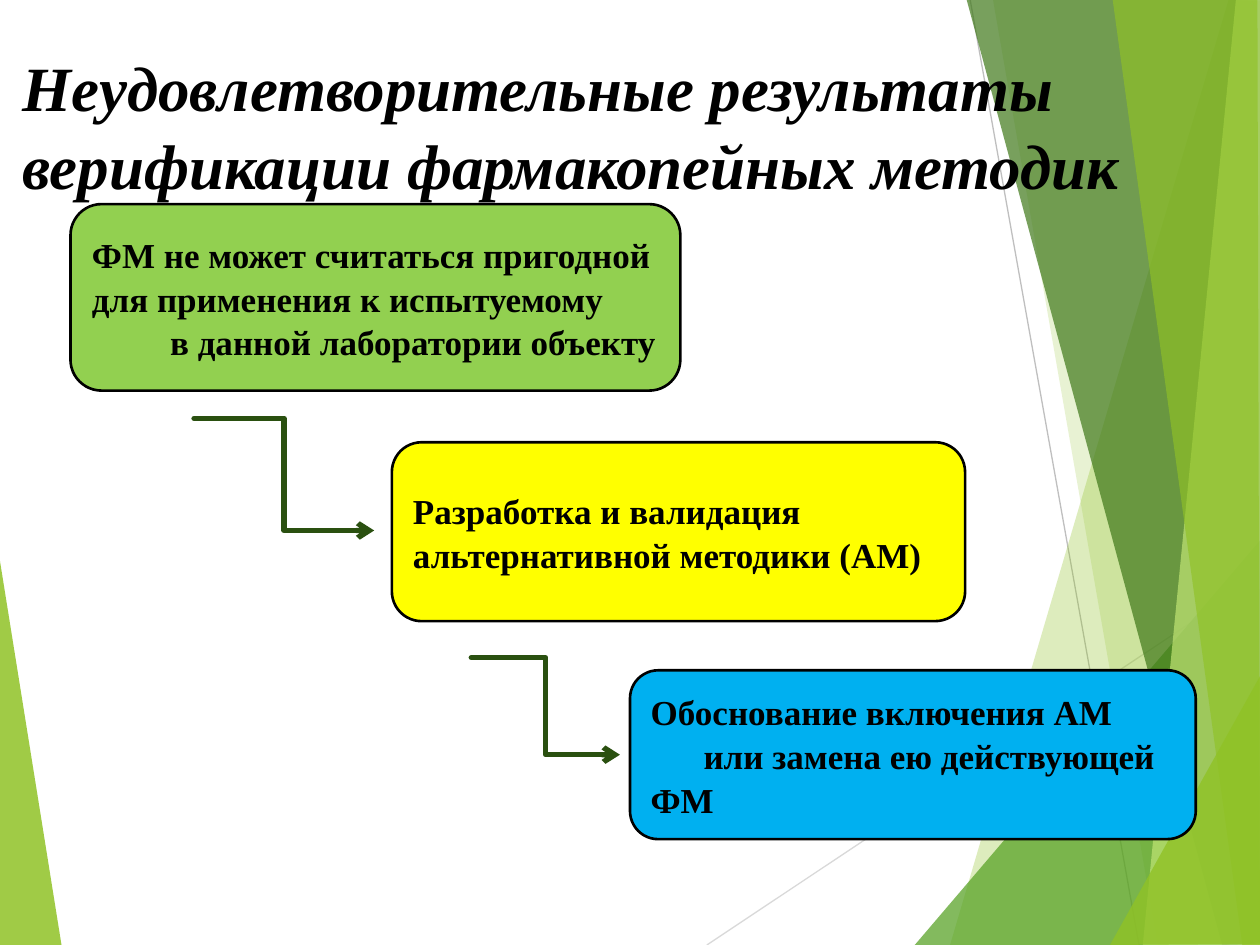
from lxml import etree
from pptx import Presentation
from pptx.dml.color import RGBColor
from pptx.enum.shapes import MSO_CONNECTOR, MSO_SHAPE
from pptx.enum.text import MSO_ANCHOR, PP_ALIGN
from pptx.oxml.ns import qn
from pptx.util import Inches, Pt

BLACK = RGBColor(0x00, 0x00, 0x00)
LIME = RGBColor(0x90, 0xC2, 0x26)
GREEN = RGBColor(0x54, 0xA0, 0x21)
DARK_GREEN = RGBColor(0x3F, 0x78, 0x19)
PALE_LIME = RGBColor(0xC0, 0xE4, 0x74)
ARROW_GREEN = RGBColor(0x2A, 0x50, 0x10)
LIGHT_GRAY = RGBColor(0xD9, 0xD9, 0xD9)
GRAY = RGBColor(0xBF, 0xBF, 0xBF)
STEP_GREEN = RGBColor(0x92, 0xD0, 0x50)
STEP_YELLOW = RGBColor(0xFF, 0xFF, 0x00)
STEP_BLUE = RGBColor(0x00, 0xB0, 0xF0)
FONT = "Times New Roman"

TITLE = "Неудовлетворительные результаты верификации фармакопейных методик"

# (left, top, width, height), fill, [(text, first-line indent)]
STEPS = [
    ((0.56, 1.62, 4.84, 1.48), STEP_GREEN,
     [("ФМ не может считаться пригодной для применения к испытуемому", 0),
      ("в данной лаборатории объекту", 0.62)]),
    ((3.11, 3.51, 4.55, 1.42), STEP_YELLOW,
     [("Разработка и валидация альтернативной методики (АМ)", 0)]),
    ((5, 5.32, 4.49, 1.34), STEP_BLUE,
     [("Обоснование включения АМ", 0),
      ("или замена ею действующей ФМ", 0.42)]),
]
STEP_ARROWS = [((1.54, 3.32), (2.97, 4.21)), ((3.74, 5.22), (4.92, 5.99))]

# corner points, fill, opacity in percent
LEFT_PANEL = ([(-0.01, 4.39), (0.49, 7.51), (-0.01, 7.5)], LIME, 85)
RIGHT_PANELS = [
    ([(9.75, 0), (7.54, 7.5), (10.02, 7.51), (10.01, 0.01)], LIME, 30),
    ([(7.88, -0.01), (9.19, 7.5), (10.01, 7.5), (10.01, -0.01)], LIME, 20),
    ([(7.26, 7.5), (10, 4.29), (10.01, 7.5)], GREEN, 72),
    ([(7.67, -0.01), (9.7, 7.5), (10.01, 7.49), (10.01, -0.01)], DARK_GREEN, 70),
    ([(9.81, -0.01), (9.07, 7.5), (10.01, 7.5), (10, -0.01)], PALE_LIME, 70),
    ([(8.83, -0.01), (9.86, 7.5), (10, 7.5), (9.98, -0.01)], LIME, 65),
    ([(8.81, 7.5), (10.01, 5.35), (10.01, 7.49)], LIME, 80),
]
THIN_LINES = [((5.61, 7.5), (10.01, 4.57), LIGHT_GRAY),
              ((7.7, 0), (9.04, 7.5), GRAY)]


def add_panel(slide, corners, color, opacity):
    points = [(Inches(x), Inches(y)) for x, y in corners]
    builder = slide.shapes.build_freeform(*points[0])
    builder.add_line_segments(points[1:], close=True)
    panel = builder.convert_to_shape()
    panel.shadow.inherit = False
    panel.line.fill.background()
    panel.fill.solid()
    panel.fill.fore_color.rgb = color
    srgb = panel.fill._xPr.find(".//" + qn("a:srgbClr"))
    etree.SubElement(srgb, qn("a:alpha"), val=str(opacity * 1000))


def add_line(slide, kind, start, end, color, width):
    ends = [Inches(v) for v in (*start, *end)]
    line = slide.shapes.add_connector(kind, *ends)
    line.line.color.rgb = color
    line.line.width = Pt(width)
    etree.SubElement(line._element.spPr, qn("a:effectLst"))
    return line


def add_step_arrow(slide, start, end):
    arrow = add_line(slide, MSO_CONNECTOR.ELBOW, start, end, ARROW_GREEN, 3)
    ln = arrow.line._get_or_add_ln()
    ln.set("cap", "rnd")
    etree.SubElement(ln, qn("a:round"))
    etree.SubElement(ln, qn("a:tailEnd"), type="arrow")


def write_text(frame, paragraphs, size, italic=False):
    frame.word_wrap = True
    for number, (text, indent) in enumerate(paragraphs):
        paragraph = frame.add_paragraph() if number else frame.paragraphs[0]
        paragraph.alignment = PP_ALIGN.LEFT
        paragraph.line_spacing = 1.04
        if indent:
            pPr = paragraph._p.get_or_add_pPr()
            pPr.set("marL", "0")
            pPr.set("indent", str(Inches(indent)))
        run = paragraph.add_run()
        run.text = text
        run.font.name = FONT
        run.font.size = Pt(size)
        run.font.bold = True
        run.font.italic = italic
        run.font.color.rgb = BLACK


def add_step(slide, box, color, paragraphs):
    step = slide.shapes.add_shape(MSO_SHAPE.ROUNDED_RECTANGLE, *map(Inches, box))
    step.shadow.inherit = False
    step.fill.solid()
    step.fill.fore_color.rgb = color
    step.line.color.rgb = BLACK
    step.line.width = Pt(1.5)
    step.text_frame.vertical_anchor = MSO_ANCHOR.MIDDLE
    write_text(step.text_frame, paragraphs, 20)


def main():
    deck = Presentation()
    deck.slide_width, deck.slide_height = Inches(10), Inches(7.5)
    slide = deck.slides.add_slide(deck.slide_layouts[6])

    add_panel(slide, *LEFT_PANEL)
    for start, end, color in THIN_LINES:
        add_line(slide, MSO_CONNECTOR.STRAIGHT, start, end, color, 0.75)
    for panel in RIGHT_PANELS:
        add_panel(slide, *panel)

    title = slide.shapes.add_textbox(*map(Inches, (0.08, 0.26, 9.65, 1.17)))
    title.text_frame.vertical_anchor = MSO_ANCHOR.TOP
    title.text_frame.margin_top = Inches(0.1)
    write_text(title.text_frame, [(TITLE, 0)], 36, italic=True)

    for step in STEPS:
        add_step(slide, *step)
    for start, end in STEP_ARROWS:
        add_step_arrow(slide, start, end)

    deck.save("out.pptx")


if __name__ == "__main__":
    main()
